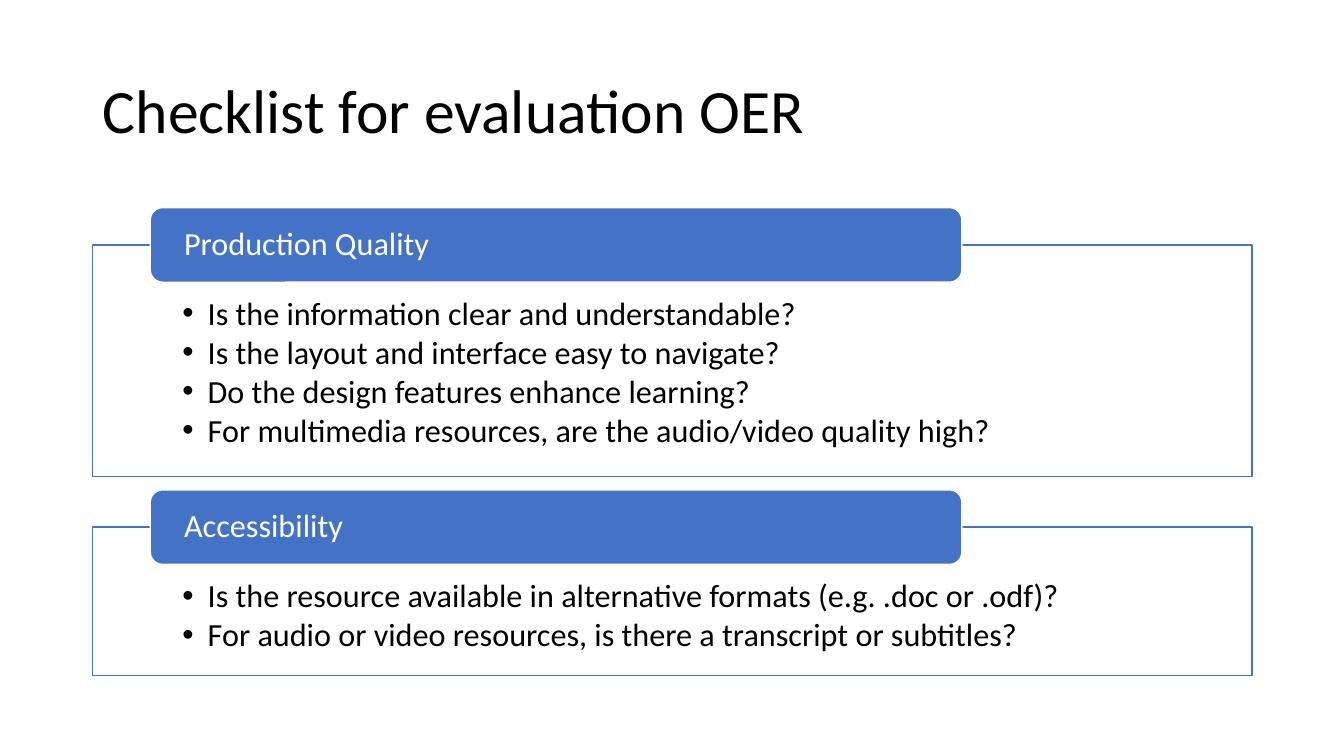
from dataclasses import dataclass

from lxml import etree
from pptx import Presentation
from pptx import util as u
from pptx.dml.color import RGBColor
from pptx.enum import shapes, text
from pptx.oxml import ns

PX = 9144  # 100 px to the inch


@dataclass(frozen=True)
class Theme:
    font: str = "Calibri"
    ink: str = "000000"
    paper: str = "FFFFFF"
    blue: str = "4472C4"
    title: int = 44
    body: int = 23


@dataclass(frozen=True)
class Group:
    name: str
    depth: int
    items: tuple[str, ...]


THEME = Theme()
LEFT, WIDTH = 92, 1150
TOP, GAP = 206, 13
TAB_LEFT, TAB_WIDTH, TAB_HEIGHT = 149, 805, 74
GROUPS = (
    Group("Production Quality", 230, (
        "Is the information clear and understandable?",
        "Is the layout and interface easy to navigate?",
        "Do the design features enhance learning?",
        "For multimedia resources, are the audio/video quality high?",
    )),
    Group("Accessibility", 147, (
        "Is the resource available in alternative formats (e.g. .doc or .odf)?",
        "For audio or video resources, is there a transcript or subtitles?",
    )),
)


def px(count: int) -> u.Emu:
    return u.Emu(count * PX)


def apply(target, values: dict) -> None:
    for name, value in values.items():
        setattr(target, name, value)


def write(shape, lines: tuple[str, ...], size: int, ink: str,
          anchor, pad: tuple[int, int, int, int]) -> None:
    """Fill a shape with left-aligned lines; pad is left, top, right, bottom."""
    frame = shape.text_frame
    left, top, right, bottom = map(px, pad)
    apply(frame, dict(word_wrap=True, vertical_anchor=anchor,
                      margin_left=left, margin_top=top,
                      margin_right=right, margin_bottom=bottom))
    frame.text = "\n".join(lines)
    for para in frame.paragraphs:
        apply(para, dict(alignment=text.PP_ALIGN.LEFT, line_spacing=0.9))
        run = para.runs[0]
        apply(run.font, dict(name=THEME.font, size=u.Pt(size)))
        run.font.color.rgb = RGBColor.from_string(ink)


def bullet(para) -> None:
    apply(para, dict(level=1, space_before=u.Pt(0), space_after=u.Pt(3)))
    props = para._p.get_or_add_pPr()
    props.set("marL", str(px(25)))
    props.set("indent", str(px(-25)))
    etree.SubElement(props, ns.qn("a:buFont")).set("typeface", "Arial")
    etree.SubElement(props, ns.qn("a:buChar")).set("char", "•")


def block(slide, kind, box: tuple[int, int, int, int], fill: str, line: str):
    shape = slide.shapes.add_shape(kind, *map(px, box))
    shape.shadow.inherit = False
    shape.fill.solid()
    shape.fill.fore_color.rgb = RGBColor.from_string(fill)
    shape.line.color.rgb = RGBColor.from_string(line)
    shape.line.width = u.Pt(1)
    return shape


def fade(shape, percent: int) -> None:
    """Set the opacity of a solid fill."""
    color = shape.fill._xPr.find(ns.qn("a:solidFill"))[0]
    etree.SubElement(color, ns.qn("a:alpha")).set("val", str(percent * 1000))


def draw(slide, group: Group, top: int) -> int:
    """Draw a framed list under its tab and return the frame's bottom."""
    edge = top + TAB_HEIGHT // 2
    kinds = shapes.MSO_SHAPE
    frame = block(slide, kinds.RECTANGLE, (LEFT, edge, WIDTH, group.depth),
                  THEME.paper, THEME.blue)
    fade(frame, 90)
    write(frame, group.items, THEME.body, THEME.ink,
          text.MSO_ANCHOR.TOP, (89, 52, 89, 18))
    for para in frame.text_frame.paragraphs:
        bullet(para)
    tab = block(slide, kinds.ROUNDED_RECTANGLE,
                (TAB_LEFT, top, TAB_WIDTH, TAB_HEIGHT),
                THEME.blue, THEME.paper)
    write(tab, (group.name,), THEME.body, THEME.paper,
          text.MSO_ANCHOR.MIDDLE, (30, 0, 30, 0))
    return edge + group.depth


def main() -> None:
    deck = Presentation()
    apply(deck, dict(slide_width=px(1333), slide_height=px(750)))
    slide = deck.slides.add_slide(deck.slide_layouts[5])
    title = slide.shapes.title
    apply(title, dict(left=px(LEFT), top=px(40),
                      width=px(WIDTH), height=px(145)))
    write(title, ("Checklist for evaluation OER",), THEME.title, THEME.ink,
          text.MSO_ANCHOR.MIDDLE, (10, 5, 10, 5))
    top = TOP
    for group in GROUPS:
        top = draw(slide, group, top) + GAP
    deck.save("out.pptx")


if __name__ == "__main__":
    main()
